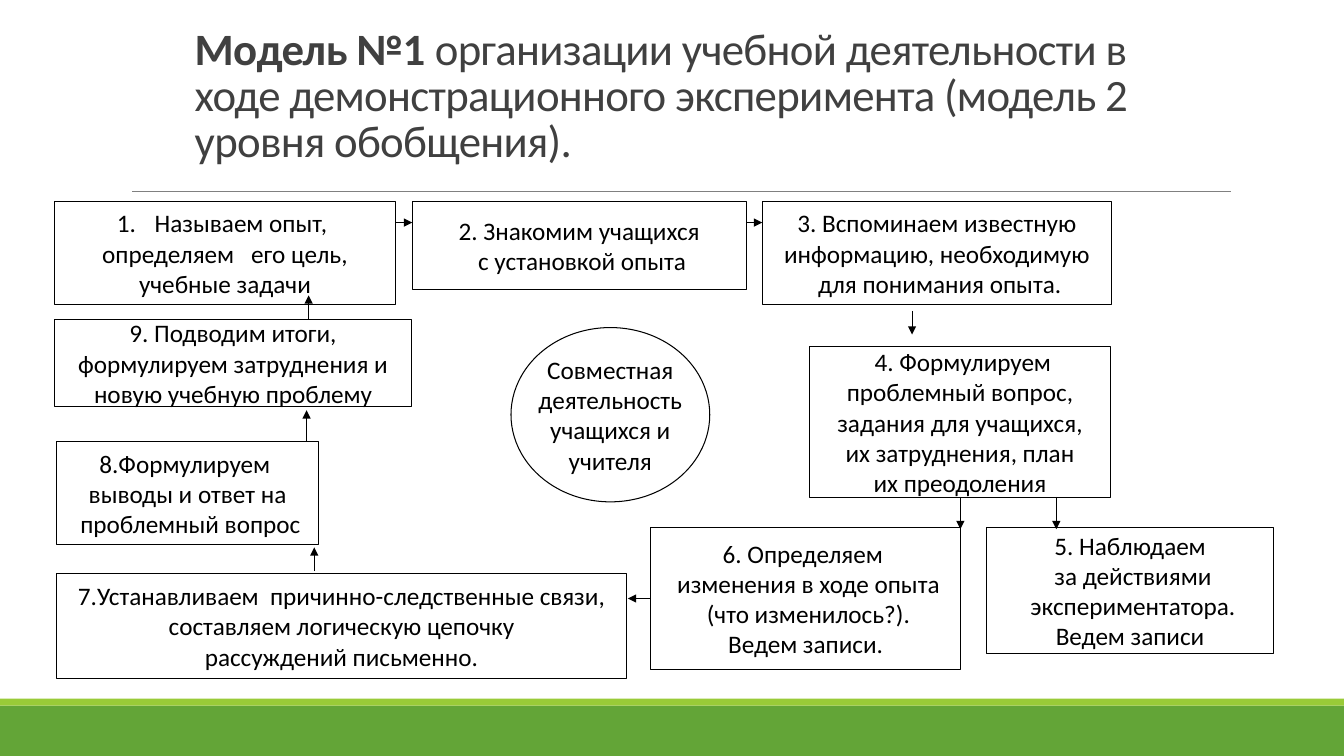
from lxml.etree import SubElement
from pptx import Presentation
from pptx.dml.color import RGBColor
from pptx.enum.shapes import MSO_CONNECTOR, MSO_SHAPE
from pptx.enum.text import MSO_ANCHOR, PP_ALIGN
from pptx.oxml.ns import qn
from pptx.util import Pt


def paint(target, color):
    """Give a fill, a line or a font a solid colour from a hex string."""
    if hasattr(target, "solid"):
        target.solid()
        target.fore_color.rgb = RGBColor.from_string(color)
    elif hasattr(target, "fill") and hasattr(target, "width"):
        paint(target.fill, color)
    else:
        target.color.rgb = RGBColor.from_string(color)


def draw_line(start, end, color, width):
    line = slide.shapes.add_connector(
        MSO_CONNECTOR.STRAIGHT, *[Pt(v) for v in start + end])
    paint(line.line, color)
    line.line.width = Pt(width)
    SubElement(line._element.spPr, qn("a:effectLst"))
    return line


deck = Presentation()
deck.slide_width, deck.slide_height = Pt(960), Pt(540)
slide = deck.slides.add_slide(deck.slide_layouts[6])

# Footer bands and title rule
for top, height, color in [(504, 36, "63A537"), (499, 5, "99CB38")]:
    band = slide.shapes.add_shape(
        MSO_SHAPE.RECTANGLE, 0, Pt(top), Pt(960), Pt(height))
    band.shadow.inherit = False
    paint(band.fill, color)
    band.line.fill.background()
draw_line((94.5, 136.8), (879, 136.8), "808080", 0.5)

# Title
title = slide.shapes.add_textbox(Pt(132), 0, Pt(690), Pt(122.4))
frame = title.text_frame
frame.word_wrap = True
frame.vertical_anchor = MSO_ANCHOR.BOTTOM
head = frame.paragraphs[0]
head.line_spacing = 0.85
for text, bold in [
    ("Модель №1", True),
    (" организации учебной деятельности в ходе демонстрационного "
     "эксперимента (модель 2 уровня обобщения).", False),
]:
    run = head.add_run()
    run.text = text
    style = {"name": "Calibri", "size": Pt(32), "bold": bold}
    for key, value in style.items():
        setattr(run.font, key, value)
    paint(run.font, "404040")
    run._r.get_or_add_rPr().set("spc", "-50")

# Steps: left, top, width, height, text; step 0 is the centre
steps = {
    1: (39, 144, 243.5, 73.5,
        "Называем опыт, \nопределяем   его цель,\nучебные задачи"),
    2: (294.5, 144, 238.5, 62.5,
        "2. Знакомим учащихся\n с установкой опыта"),
    3: (544.5, 144, 249.5, 73.5,
        "3. Вспоминаем известную\nинформацию, необходимую\n"
        " для понимания опыта."),
    4: (578, 247.5, 215.5, 108,
        " 4. Формулируем\nпроблемный вопрос,\nзадания для учащихся,\n"
        "их затруднения, план\n их преодоления "),
    5: (705, 376.5, 204.5, 90.5,
        "5. Наблюдаем\n за действиями\n экспериментатора.\nВедем записи"),
    6: (465, 376.5, 221, 102,
        "6. Определяем \n изменения в ходе опыта\n"
        " (что изменилось?).\nВедем записи."),
    7: (40.5, 409.5, 407, 75,
        " 7.Устанавливаем  причинно-следственные связи, \v"
        "составляем логическую цепочку\nрассуждений письменно."),
    8: (40.5, 315.5, 187, 73.5,
        "8.Формулируем \nвыводы и ответ на\n проблемный вопрос"),
    9: (39, 228, 255, 62.5,
        "9. Подводим итоги,\nформулируем затруднения и\n"
        "новую учебную проблему"),
    0: (365, 234, 142, 124.5,
        "Совместная\nдеятельность\nучащихся и\nучителя"),
}
boxes = {}
for step, (*place, text) in steps.items():
    kind = MSO_SHAPE.RECTANGLE if step else MSO_SHAPE.OVAL
    box = slide.shapes.add_shape(kind, *[Pt(v) for v in place])
    boxes[step] = box
    box.shadow.inherit = False
    paint(box.fill, "FFFFFF")
    paint(box.line, "000000")
    box.line.width = Pt(0.75)
    frame = box.text_frame
    frame.text = text
    frame.word_wrap = False
    frame.vertical_anchor = MSO_ANCHOR.MIDDLE
    for para in frame.paragraphs:
        para.alignment = PP_ALIGN.CENTER
        for run in para.runs:
            for key, value in {"name": "Calibri", "size": Pt(18)}.items():
                setattr(run.font, key, value)
            paint(run.font, "000000")

# Step 1 is numbered automatically, with a hanging indent
for para in boxes[1].text_frame.paragraphs:
    props = para._p.get_or_add_pPr()
    props.set("marL", str(Pt(27)))
    props.set("indent", str(-Pt(27)))
first = boxes[1].text_frame.paragraphs[0]._p.get_or_add_pPr()
SubElement(first, qn("a:buAutoNum"), type="arabicPeriod")

# Arrows: start, end, step whose left side the arrow leaves
arrows = [
    ((283, 159), (294.5, 159), None),
    ((533, 159), (544.5, 159), None),
    ((651.5, 222), (651.5, 239), None),
    ((754.5, 355), (754.5, 378), None),
    ((686, 355), (686, 378), None),
    ((465, 427.5), (448.5, 427.5), 6),
    ((224.5, 408), (224.5, 391), None),
    ((219, 315.5), (219, 293), None),
    ((220.5, 228), (220.5, 211), None),
]
for start, end, step in arrows:
    arrow = draw_line(start, end, "000000", 0.75)
    SubElement(arrow.line._get_or_add_ln(), qn("a:tailEnd"), type="triangle")
    if step:
        arrow.begin_connect(boxes[step], 1)

deck.save("out.pptx")
